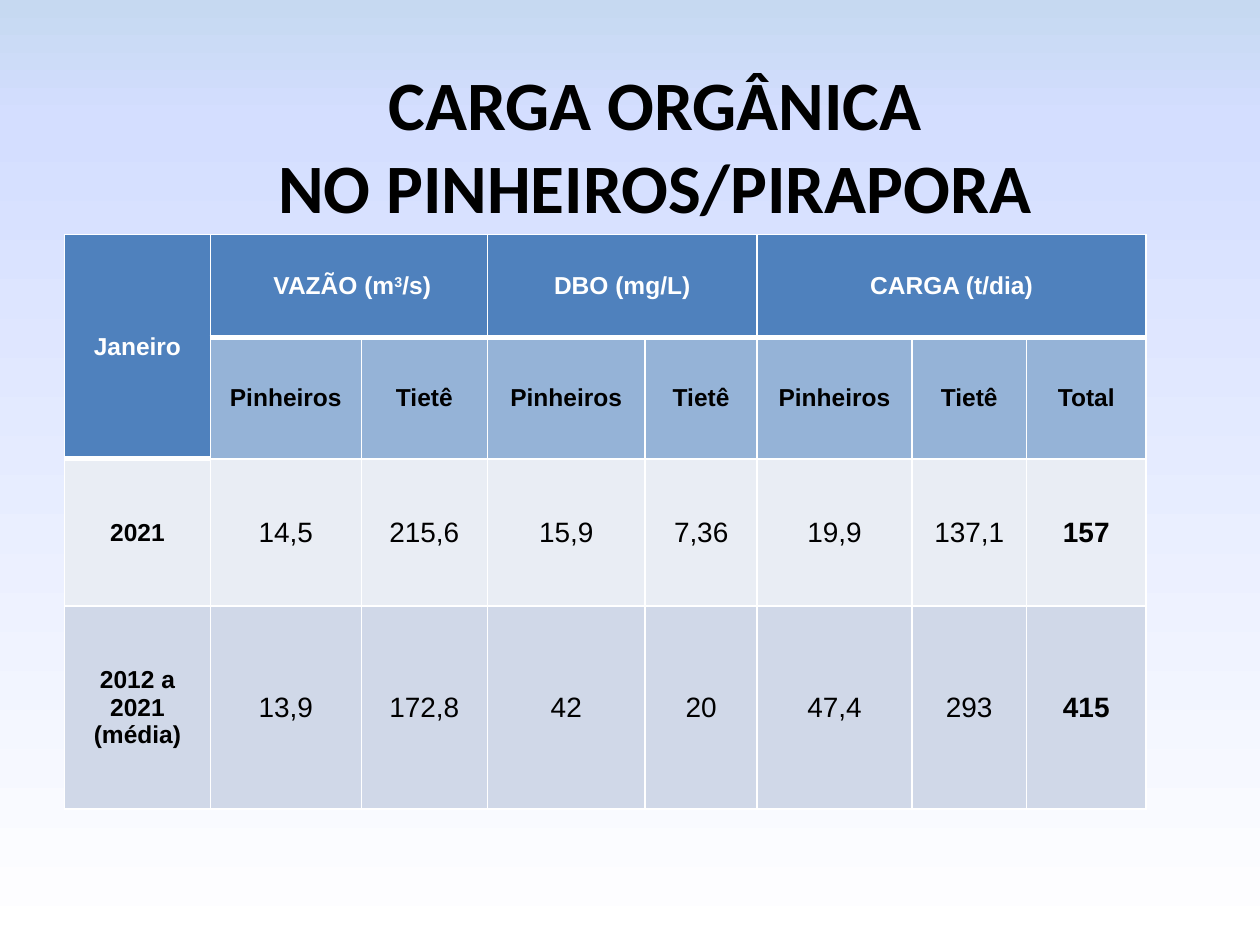
from lxml import etree
from pptx import Presentation
from pptx.dml.color import RGBColor
from pptx.enum import text
from pptx.oxml import ns
from pptx.util import Pt

COLORS = {
    "sky": "C6D9F1", "lavender": "D4DEFF", "white": "FFFFFF", "black": "000000",
    "header": "4F81BD", "subheader": "95B3D7", "light": "E9EDF4", "band": "D0D8E8",
}
COL_WIDTHS = [83.3, 86.3, 72, 90.2, 64, 88.4, 65.6, 68.2]
ROW_HEIGHTS = [59, 69.2, 84.2, 116]
ROW_FILLS = ["header", "subheader", "light", "band"]
GROUPS = [  # first column, last column, runs as (text, is superscript)
    (1, 2, [(" VAZÃO (m", False), ("3", True), ("/s)", False)]),
    (3, 4, [("DBO (mg/L)", False)]),
    (5, 7, [("CARGA (t/dia)", False)]),
]
RIVERS = ["Pinheiros", "Tietê"] * 3 + ["Total"]
DATA = [
    ["2021", "14,5", "215,6", "15,9", "7,36", "19,9", "137,1", "157"],
    ["2012 a 2021 (média)", "13,9", "172,8", "42", "20", "47,4", "293", "415"],
]


def add_run(p, words, size, font="Arial", color="black", bold=True, raised=False):
    r = p.add_run()
    r.text = words
    r.font.size, r.font.name, r.font.bold = Pt(size), font, bold
    r.font.color.rgb = RGBColor.from_string(COLORS[color])
    if raised:
        r._r.get_or_add_rPr().set("baseline", "30000")


def set_background(s):
    fill = s.background.fill
    fill.gradient()
    fill.gradient_angle = 270
    stops = fill._fill._gradFill.find(ns.qn("a:gsLst"))
    for stop in list(stops):
        stops.remove(stop)
    for percent, name in [(0, "sky"), (13, "lavender"), (100, "white")]:
        stop = etree.SubElement(stops, ns.qn("a:gs"), pos=str(percent * 1000))
        etree.SubElement(stop, ns.qn("a:srgbClr"), val=COLORS[name])


def add_title(s, lines):
    tf = s.shapes.add_textbox(Pt(36.7), Pt(37.4), Pt(675.4), Pt(90)).text_frame
    tf.word_wrap = True
    tf.vertical_anchor = text.MSO_ANCHOR.MIDDLE
    p = tf.paragraphs[0]
    p.alignment = text.PP_ALIGN.CENTER
    for i, line in enumerate(lines):
        if i:
            p.add_line_break()
        add_run(p, line, 39.6, "Calibri")


def set_borders(cell, top, bottom):
    tcPr = cell._tc.get_or_add_tcPr()
    for side, width in [("L", 1), ("R", 1), ("T", top), ("B", bottom)]:
        ln = etree.SubElement(tcPr, ns.qn("a:ln" + side), w=str(Pt(width)))
        solid = etree.SubElement(ln, ns.qn("a:solidFill"))
        etree.SubElement(solid, ns.qn("a:srgbClr"), val=COLORS["white"])


def style_cell(cell, row, col):
    # A thick rule closes the header, which is two rows deep in the first column
    header_end = 1 if col == 0 else 0
    set_borders(cell, 3 if row == header_end + 1 else 1, 3 if row == header_end else 1)
    fill = "header" if row <= header_end else ROW_FILLS[row]
    cell.fill.solid()
    cell.fill.fore_color.rgb = RGBColor.from_string(COLORS[fill])
    cell.vertical_anchor = text.MSO_ANCHOR.MIDDLE
    is_value = row > 1 and col > 0
    cell.margin_left = cell.margin_right = Pt(0.7 if is_value else 5)
    cell.margin_top = Pt(0.7 if is_value else 2.9)
    cell.margin_bottom = Pt(0 if is_value else 2.9)
    cell.text_frame.paragraphs[0].alignment = text.PP_ALIGN.CENTER


def add_load_table(s):
    table = s.shapes.add_table(len(ROW_HEIGHTS), len(COL_WIDTHS), Pt(36.9), Pt(134),
                               Pt(sum(COL_WIDTHS)), Pt(sum(ROW_HEIGHTS))).table
    table.first_row = table.horz_banding = False
    for column, width in zip(table.columns, COL_WIDTHS):
        column.width = Pt(width)
    for row, height in enumerate(ROW_HEIGHTS):
        table.rows[row].height = Pt(height)
        for col in range(len(COL_WIDTHS)):
            style_cell(table.cell(row, col), row, col)

    def write(row, col, words, size=14, **look):
        add_run(table.cell(row, col).text_frame.paragraphs[0], words, size, **look)

    # Header groups and river names
    table.cell(0, 0).merge(table.cell(1, 0))
    write(0, 0, "Janeiro", color="white")
    for first, last, runs in GROUPS:
        table.cell(0, first).merge(table.cell(0, last))
        for words, raised in runs:
            write(0, first, words, color="white", raised=raised)
    for col, river in enumerate(RIVERS, 1):
        write(1, col, river)

    # Periods and measured values, with totals in bold
    for row, (period, *values) in enumerate(DATA, 2):
        write(row, 0, period)
        for col, value in enumerate(values, 1):
            write(row, col, value, 16, bold=col == len(values))


def main():
    prs = Presentation()
    prs.slide_width, prs.slide_height = Pt(720), Pt(540)
    s = prs.slides.add_slide(prs.slide_layouts[6])
    set_background(s)
    add_title(s, ["CARGA ORGÂNICA", "NO PINHEIROS/PIRAPORA"])
    add_load_table(s)
    prs.save("out.pptx")


if __name__ == "__main__":
    main()
